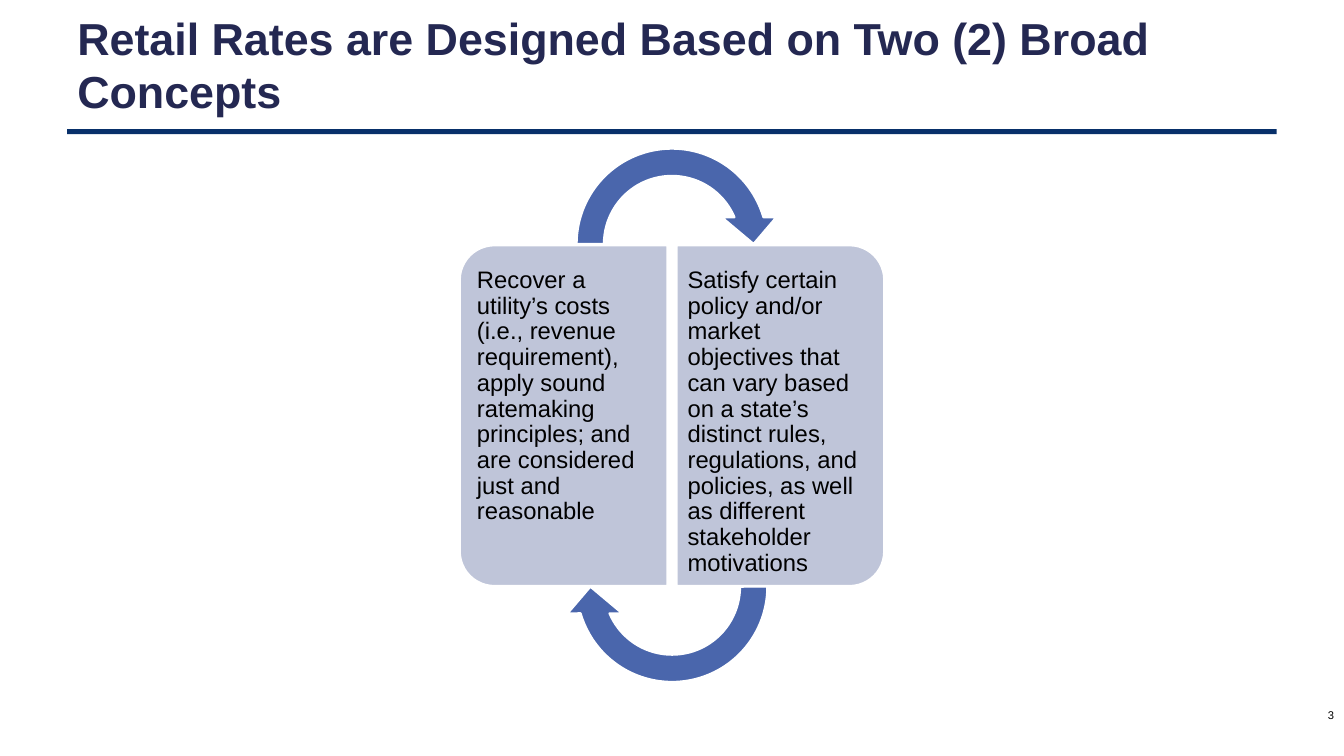
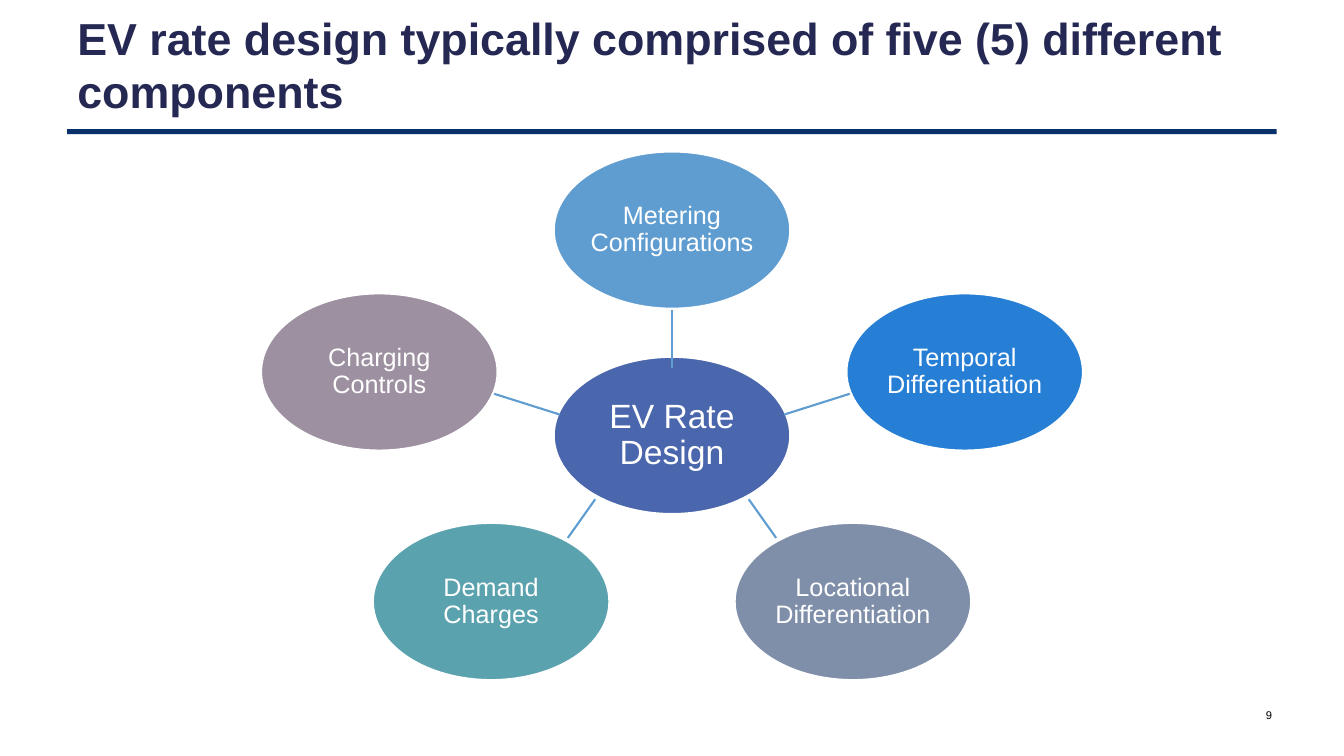
import math
from dataclasses import dataclass
from typing import NamedTuple

from pptx import Presentation
from pptx import util as u
from pptx.dml.color import RGBColor
from pptx.enum import shapes, text
from pptx.oxml.ns import qn

COLUMNS, ROWS = 80, 45
CELL = u.Inches(7.5) / ROWS
CENTER = COLUMNS / 2


@dataclass(frozen=True)
class Theme:
    font: str = "Arial"
    title: str = "242852"
    rule: str = "08306A"
    accent: str = "4A66AC"
    panel: str = "BFC5D9"
    spoke: str = "5F9DD1"
    white: str = "FFFFFF"
    black: str = "000000"
    title_size: float = 32
    hub_size: float = 24
    bubble_size: float = 18
    panel_size: float = 17
    number_size: float = 8
    line: float = 1.5


THEME = Theme()


class Area(NamedTuple):
    """Left, top, width and height in grid cells."""
    left: float
    top: float
    width: float
    height: float

    def lengths(self) -> list[u.Emu]:
        return [cells(value) for value in self]


class Panel(NamedTuple):
    words: str
    side: int
    insets: tuple[float, float, float, float]


class Arc(NamedTuple):
    row: float
    rotation: float


class Bubble(NamedTuple):
    """A bubble and its spoke, from and to, measured from the hub's centre."""
    words: str
    fill: str
    spoke: tuple[float, float, float, float]


TITLE = Area(4, 0.24, 72, 7.08)
RULE = Area(4, 7.68, 72, 0.3)

PANEL_ROW, PANEL_LENGTH, PANEL_DEPTH = 24.74, 20.28, 12.36
PANEL_OFFSET, WORDS_OFFSET = 6.45, 6.15
PANELS = [
    Panel("Recover a utility’s costs (i.e., revenue requirement), apply sound "
          "ratemaking principles; and are considered just and reasonable",
          -1, (0.07, 0.12, 0.11, 0.12)),
    Panel("Satisfy certain policy and/or market objectives that can vary based "
          "on a state’s distinct rules, regulations, and policies, as well as "
          "different stakeholder motivations",
          1, (0.11, 0.12, 0.07, 0.12)),
]

ARC_SIZE = 12.96
ARCS = [Arc(14.52, 0), Arc(34.92, 180)]

HUB_ROW = 25.92
ORBIT_X, ORBIT_Y = 18.32, 12.22
BUBBLE_WIDTH, BUBBLE_HEIGHT = 14.08, 9.36
BUBBLES = [
    Bubble("Metering Configurations", "5F9DD1", (0, -4, 0, -7.45)),
    Bubble("Temporal Differentiation", "267FD5", (6.7, -1.25, 10.65, -2.5)),
    Bubble("Locational Differentiation", "7F8FA9", (4.57, 3.8, 6.2, 6.1)),
    Bubble("Demand Charges", "5AA2AE", (-4.57, 3.8, -6.2, 6.1)),
    Bubble("Charging Controls", "9D90A0", (-6.7, -1.25, -10.65, -2.5)),
]


def cells(count: float) -> u.Emu:
    return u.Emu(round(count * CELL))


def centered(x: float, y: float, width: float, height: float) -> Area:
    return Area(x - width / 2, y - height / 2, width, height)


def assign(target, formats: dict) -> None:
    for name, value in formats.items():
        setattr(target, name, value)


def write(shape, words: str, size: float, color: str, *, bold: bool = False,
          align=text.PP_ALIGN.LEFT, anchor=text.MSO_ANCHOR.MIDDLE,
          spacing: float | None = None, insets=(0.1, 0.05, 0.1, 0.05)) -> None:
    sides = ("margin_left", "margin_top", "margin_right", "margin_bottom")
    frame = shape.text_frame
    assign(frame, {"word_wrap": True, "auto_size": text.MSO_AUTO_SIZE.NONE,
                   "vertical_anchor": anchor,
                   **dict(zip(sides, map(u.Inches, insets)))})
    para = frame.paragraphs[0]
    assign(para, {"alignment": align, "line_spacing": spacing})
    span = para.add_run()
    span.text = words
    assign(span.font, {"name": THEME.font, "size": u.Pt(size), "bold": bold})
    span.font.color.rgb = RGBColor.from_string(color)


def paint(shape, fill: str, outlined: bool = True) -> None:
    shape.shadow.inherit = False
    shape.fill.solid()
    shape.fill.fore_color.rgb = RGBColor.from_string(fill)
    if outlined:
        shape.line.color.rgb = RGBColor.from_string(THEME.white)
        shape.line.width = u.Pt(THEME.line)
    else:
        shape.line.fill.background()


def add_page(deck, title: str):
    """Add a slide with the shared title and rule."""
    page = deck.slides.add_slide(deck.slide_layouts.get_by_name("Title Only"))
    heading = page.shapes.title
    assign(heading, dict(zip(("left", "top", "width", "height"), TITLE.lengths())))
    write(heading, title, THEME.title_size, THEME.title, bold=True,
          anchor=text.MSO_ANCHOR.BOTTOM)
    rule = page.shapes.add_shape(shapes.MSO_SHAPE.RECTANGLE, *RULE.lengths())
    paint(rule, THEME.rule, outlined=False)
    return page


def add_number(page, number: str, column: float) -> None:
    box = page.shapes.add_textbox(*Area(column, 41.34, 3, 2.4).lengths())
    write(box, number, THEME.number_size, THEME.black, align=text.PP_ALIGN.RIGHT)


def add_arc(page, arc: Arc) -> None:
    area = centered(CENTER, arc.row, ARC_SIZE, ARC_SIZE)
    arrow = page.shapes.add_shape(shapes.MSO_SHAPE.CIRCULAR_ARROW, *area.lengths())
    arrow.rotation = arc.rotation
    paint(arrow, THEME.accent)


def add_panel(page, panel: Panel) -> None:
    area = centered(CENTER + panel.side * PANEL_OFFSET, PANEL_ROW,
                    PANEL_LENGTH, PANEL_DEPTH)
    card = page.shapes.add_shape(shapes.MSO_SHAPE.ROUND_2_SAME_RECTANGLE,
                                 *area.lengths())
    card.adjustments[0], card.adjustments[1] = 0.167, 0
    card.rotation = panel.side * 90 % 360
    paint(card, THEME.panel)
    words_area = centered(CENTER + panel.side * WORDS_OFFSET, PANEL_ROW,
                          11.76, 19.02)
    box = page.shapes.add_textbox(*words_area.lengths())
    write(box, panel.words, THEME.panel_size, THEME.black, spacing=0.9,
          anchor=text.MSO_ANCHOR.TOP, insets=panel.insets)


def add_bubble(page, x: float, y: float, words: str, fill: str, size: float) -> None:
    area = centered(x, y, BUBBLE_WIDTH, BUBBLE_HEIGHT)
    oval = page.shapes.add_shape(shapes.MSO_SHAPE.OVAL, *area.lengths())
    paint(oval, fill)
    write(oval, words, size, THEME.white, align=text.PP_ALIGN.CENTER,
          spacing=0.9, insets=(0.01,) * 4)


def add_spoke(page, x0: float, y0: float, x1: float, y1: float) -> None:
    ends = (CENTER + x0, HUB_ROW + y0, CENTER + x1, HUB_ROW + y1)
    spoke = page.shapes.add_connector(shapes.MSO_CONNECTOR.STRAIGHT,
                                      *map(cells, ends))
    spoke.line.color.rgb = RGBColor.from_string(THEME.spoke)
    spoke.line.width = u.Pt(THEME.line)
    properties = spoke._element.spPr
    properties.append(properties.makeelement(qn("a:effectLst"), {}))


def add_concepts(deck) -> None:
    page = add_page(deck, "Retail Rates are Designed Based on Two (2) Broad Concepts")
    for arc in ARCS:
        add_arc(page, arc)
    for panel in PANELS:
        add_panel(page, panel)
    add_number(page, "3", 77)


def add_components(deck) -> None:
    page = add_page(
        deck, "EV rate design typically comprised of five (5) different components")
    add_bubble(page, CENTER, HUB_ROW, "EV Rate Design", THEME.accent, THEME.hub_size)
    for index, bubble in enumerate(BUBBLES):
        angle = math.tau * index / len(BUBBLES)
        add_spoke(page, *bubble.spoke)
        add_bubble(page, CENTER + ORBIT_X * math.sin(angle),
                   HUB_ROW - ORBIT_Y * math.cos(angle),
                   bubble.words, bubble.fill, THEME.bubble_size)
    add_number(page, "9", 73.32)


def main() -> None:
    deck = Presentation()
    deck.slide_width, deck.slide_height = cells(COLUMNS), cells(ROWS)
    add_concepts(deck)
    add_components(deck)
    deck.save("out.pptx")


if __name__ == "__main__":
    main()
